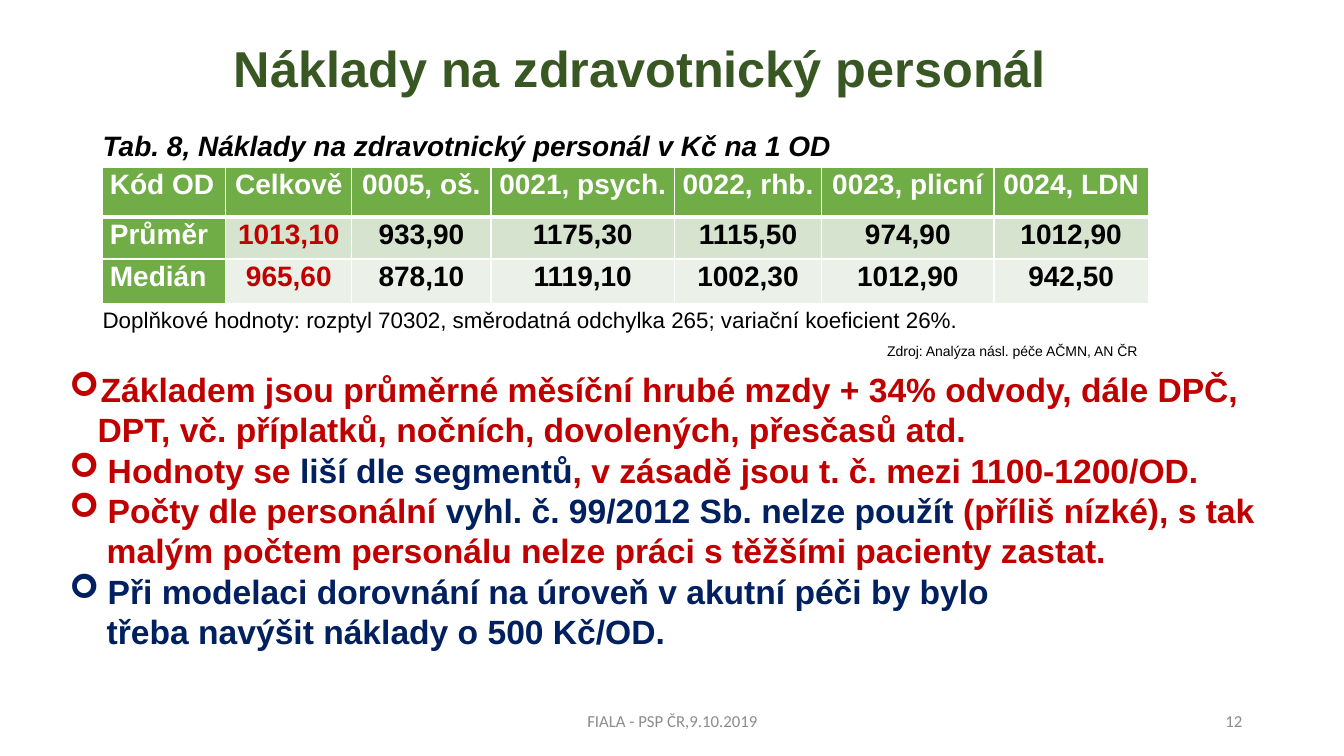
from lxml import etree
from pptx import Presentation
from pptx import util as u
from pptx.dml.color import RGBColor
from pptx.enum import text
from pptx.oxml import ns

RED, NAVY, BLACK, WHITE, GREEN, GRAY = "C00000", "002060", "000000", "FFFFFF", "70AD47", "8C8C8C"
LEFT, CENTER, RIGHT, JUSTIFY = (
    text.PP_ALIGN.LEFT, text.PP_ALIGN.CENTER, text.PP_ALIGN.RIGHT, text.PP_ALIGN.JUSTIFY)

COLUMNS = [1.22, 1.25, 1.38, 1.82, 1.46, 1.71, 1.53]
ROWS = [0.49, 0.42, 0.44]
COSTS = [
    ["Kód OD", "Celkově", "0005, oš.", "0021, psych.", "0022, rhb.", "0023, plicní", "0024, LDN"],
    ["Průměr", "1013,10", "933,90", "1175,30", "1115,50", "974,90", "1012,90"],
    ["Medián", "965,60", "878,10", "1119,10", "1002,30", "1012,90", "942,50"],
]
ROW_FILLS = [GREEN, "D5E3CF", "EBF1E9"]

POINTS = [
    (0.31, True, [("Základem jsou průměrné měsíční hrubé mzdy + 34% odvody, dále DPČ,", RED)]),
    (0.28, False, [("DPT, vč. příplatků, nočních, dovolených, přesčasů atd.", RED)]),
    (0.38, True, [("Hodnoty se ", RED), ("liší dle segmentů", NAVY),
                  (", v zásadě jsou t. č. mezi 1100-1200/OD.", RED)]),
    (0.38, True, [("Počty dle personální ", RED), ("vyhl. č. 99/2012 Sb. nelze použít", NAVY),
                  (" (příliš nízké), s tak", RED)]),
    (0.37, False, [("malým počtem personálu nelze práci s těžšími pacienty zastat.", RED)]),
    (0.38, True, [("Při modelaci dorovnání na úroveň v akutní péči by bylo", NAVY)]),
    (0.37, False, [("třeba navýšit náklady o 500 Kč/OD.", NAVY)]),
]


def rgb(value):
    return RGBColor.from_string(value)


class CostSlide:
    """Holds the text style and the current slide and adds its elements."""

    def __init__(self, presentation, font="Arial"):
        self.font = font
        self.slide = presentation.slides.add_slide(presentation.slide_layouts[5])

    def format_run(self, run, size, color, bold=False, italic=False, font=None):
        run.font.name = font or self.font
        run.font.size = u.Pt(size)
        run.font.bold = bold
        run.font.italic = italic
        run.font.color.rgb = rgb(color)

    def fill_paragraph(self, paragraph, words, size, color, align=LEFT, spacing=1.0, **style):
        paragraph.text = words
        paragraph.alignment = align
        paragraph.line_spacing = spacing
        self.format_run(paragraph.runs[0], size, color, **style)

    def title(self, box, words, size, color):
        shape = self.slide.shapes.title
        shape.left, shape.top, shape.width, shape.height = map(u.Inches, box)
        frame = shape.text_frame
        frame.vertical_anchor = text.MSO_ANCHOR.MIDDLE
        self.fill_paragraph(frame.paragraphs[0], words, size, color, CENTER, 0.9, bold=True)

    def frame(self, box, anchor=text.MSO_ANCHOR.TOP):
        frame = self.slide.shapes.add_textbox(*map(u.Inches, box)).text_frame
        frame.word_wrap = True
        frame.vertical_anchor = anchor
        return frame

    def label(self, box, words, size, color, anchor=text.MSO_ANCHOR.TOP, **style):
        self.fill_paragraph(self.frame(box, anchor).paragraphs[0], words, size, color, **style)

    def border(self, cell, side, points):
        line = etree.SubElement(cell._tc.get_or_add_tcPr(), ns.qn(f"a:ln{side}"), w=str(u.Pt(points)))
        fill = etree.SubElement(line, ns.qn("a:solidFill"))
        etree.SubElement(fill, ns.qn("a:srgbClr"), val=WHITE)

    def cell(self, cell, words, fill, color, align, bottom):
        for side, points in (("L", 1), ("R", 1), ("T", 1), ("B", bottom)):
            self.border(cell, side, points)
        cell.fill.solid()
        cell.fill.fore_color.rgb = rgb(fill)
        cell.margin_left = cell.margin_right = u.Inches(0.07)
        cell.margin_top = cell.margin_bottom = 0
        self.fill_paragraph(cell.text_frame.paragraphs[0], words, 20, color, align, 1.07, bold=True)

    def table(self, left, top):
        box = map(u.Inches, (left, top, sum(COLUMNS), sum(ROWS)))
        table = self.slide.shapes.add_table(len(ROWS), len(COLUMNS), *box).table
        for column, width in zip(table.columns, COLUMNS):
            column.width = u.Inches(width)
        for r, (values, height) in enumerate(zip(COSTS, ROWS)):
            table.rows[r].height = u.Inches(height)
            for c, words in enumerate(values):
                heading = r == 0 or c == 0
                color = WHITE if heading else RED if c == 1 else BLACK
                self.cell(table.cell(r, c), words, GREEN if heading else ROW_FILLS[r], color,
                          LEFT if c == 0 else CENTER, 3 if r == 0 else 1)

    def points(self, box, items, size):
        frame = self.frame(box)
        for number, (indent, bullet, runs) in enumerate(items):
            paragraph = frame.add_paragraph() if number else frame.paragraphs[0]
            properties = paragraph._p.get_or_add_pPr()
            properties.set("marL", str(u.Inches(indent)))
            if bullet:
                properties.set("indent", str(-u.Inches(indent)))
                etree.SubElement(properties, ns.qn("a:buFont"), typeface="Wingdings")
                etree.SubElement(properties, ns.qn("a:buChar"), char="➢")
            for words, color in runs:
                run = paragraph.add_run()
                run.text = words
                self.format_run(run, size, color, bold=True)


def main():
    presentation = Presentation()
    presentation.slide_width, presentation.slide_height = u.Inches(13.33), u.Inches(7.5)
    page = CostSlide(presentation)
    page.title((0.73, 0.25, 11.24, 0.91), "Náklady na zdravotnický personál", 36, "385723")
    page.label((0.92, 1.26, 11.5, 0.4), "Tab. 8, Náklady na zdravotnický personál v Kč na 1 OD",
               20, BLACK, spacing=0.9, bold=True, italic=True)
    page.table(1.02, 1.66)
    page.label((0.92, 2.99, 10.47, 0.37),
               "Doplňkové hodnoty: rozptyl 70302, směrodatná odchylka 265; variační koeficient 26%.",
               16, BLACK, align=JUSTIFY)
    page.label((8.7, 3.35, 2.83, 0.27), "Zdroj: Analýza násl. péče AČMN, AN ČR", 10, BLACK)
    page.points((0.59, 3.61, 12.15, 2.93), POINTS, 24)
    middle = text.MSO_ANCHOR.MIDDLE
    page.label((4.42, 6.95, 4.5, 0.4), "FIALA - PSP ČR,9.10.2019", 12, GRAY, middle,
               align=CENTER, font="Calibri")
    page.label((9.42, 6.95, 3, 0.4), "12", 12, GRAY, middle, align=RIGHT, font="Calibri")
    presentation.save("out.pptx")


if __name__ == "__main__":
    main()
